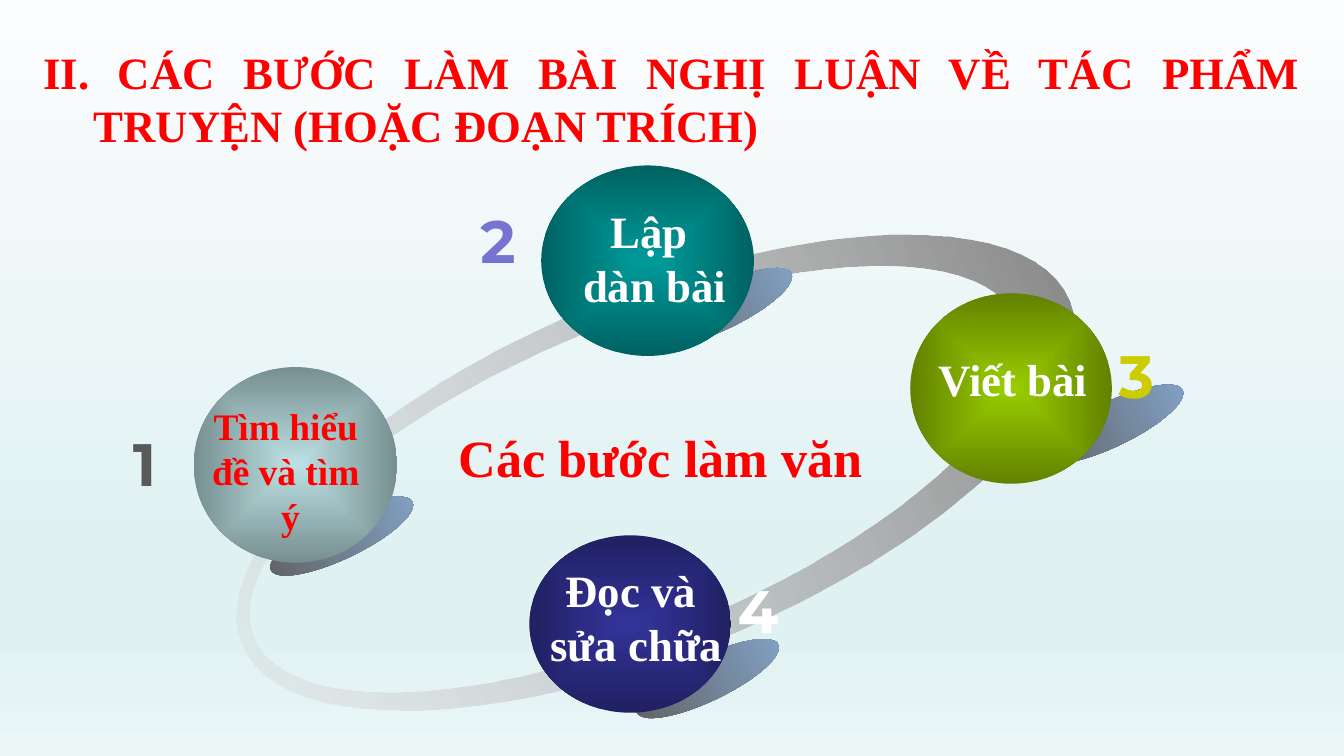
import math

from lxml import etree
from pptx import Presentation
from pptx.dml.color import RGBColor
from pptx.enum.shapes import MSO_SHAPE
from pptx.enum.text import MSO_AUTO_SIZE, PP_ALIGN
from pptx.oxml import parse_xml
from pptx.oxml.ns import nsdecls, qn
from pptx.util import Cm, Pt

OVAL = MSO_SHAPE.OVAL
CENTER, LEFT, JUSTIFY = PP_ALIGN.CENTER, PP_ALIGN.LEFT, PP_ALIGN.JUSTIFY
GROW, FIXED = MSO_AUTO_SIZE.SHAPE_TO_FIT_TEXT, MSO_AUTO_SIZE.NONE

RED = RGBColor(0xFF, 0x00, 0x00)
WHITE = RGBColor(0xFF, 0xFF, 0xFF)
GREY = RGBColor(0x59, 0x59, 0x59)
LILAC = RGBColor(0x75, 0x75, 0xD1)
YELLOW = RGBColor(0xCC, 0xCC, 0x00)
ICE = RGBColor(0xBB, 0xE0, 0xE3)
TEAL = RGBColor(0x00, 0x99, 0x99)
LIME = RGBColor(0x99, 0xCC, 0x00)
NAVY = RGBColor(0x33, 0x33, 0x99)
SMOKE = RGBColor(0x5F, 0x5F, 0x5F)
STEEL = RGBColor(0x84, 0xA5, 0xCA)
SILVER = RGBColor(0xE2, 0xE2, 0xE2)
ASH = RGBColor(0x80, 0x80, 0x80)
SKY = RGBColor(0xFC, 0xFD, 0xFE)
MINT = RGBColor(0xE0, 0xF1, 0xF2)
PALE = RGBColor(0xEB, 0xF6, 0xF7)

SERIF, SANS = "Times New Roman", "Montserrat"
LINEAR = '<a:lin ang="0" scaled="0"/>'
DOWN = '<a:lin ang="5400000" scaled="0"/>'
RADIAL = ('<a:path path="shape"><a:fillToRect l="50000" t="50000" '
          'r="50000" b="50000"/></a:path>')

# ball box, ball colour, shadow offset, label (offset, size), number offset (cm)
STEPS = [
    dict(box=(4.88, 9.25, 5.13, 4.93), ball=ICE, shade=(1.75, 3.7),
         lines=["Tìm hiểu đề và tìm", " ý"], label=(0, 0.78, 4.65, 4.47),
         size=26.7, ink=RED, spot=(-1.78, 1.39), tint=GREY),
    dict(box=(13.64, 4.17, 5.36, 4.8), ball=TEAL, shade=(2.54, 3.02),
         lines=["Lập ", "dàn bài"], label=(0.18, 0.84, 5.36, 3),
         spot=(-1.78, 0.84), tint=LILAC),
    dict(box=(22.94, 7.39, 5.08, 4.8), ball=LIME, shade=(3.1, 2.74),
         lines=["Viết bài"], label=(0.46, 1.35, 4.29, 1.63),
         align=LEFT, wrap=False, spot=(5, 1.02), tint=YELLOW),
    dict(box=(13.34, 13.49, 5.08, 4.47), ball=NAVY, shade=(2.51, 3.05),
         lines=["Đọc và ", "sửa chữa"], label=(0.25, 0.56, 4.9, 3),
         wrap=False, spot=(5, 0.84), tint=WHITE),
]


def blend(fill, parent, stops, course):
    """Give parent a gradient; each stop is (percent, colour, modifier)."""
    fill.solid()
    marks = "".join(
        f'<a:gs pos="{pos * 1000}"><a:srgbClr val="{color}">{extra}'
        '</a:srgbClr></a:gs>' for pos, color, extra in stops)
    grad = parse_xml(f'<a:gradFill {nsdecls("a")} rotWithShape="1">'
                     f'<a:gsLst>{marks}</a:gsLst>{course}</a:gradFill>')
    parent.replace(parent.find(qn("a:solidFill")), grad)


def finish(shape, stops, course):
    shape.shadow.inherit = False
    shape.line.fill.background()
    blend(shape.fill, shape._element.spPr, stops, course)


def write(slide, box, lines, size, color, font=SERIF, align=CENTER,
          wrap=True, auto=GROW):
    frame = slide.shapes.add_textbox(*map(Cm, box)).text_frame
    frame.word_wrap = wrap
    frame.auto_size = auto
    frame.text = "\n".join(lines)
    for para in frame.paragraphs:
        para.alignment = align
        para.font.name = font
        para.font.size = Pt(size)
        para.font.bold = True
        para.font.color.rgb = color
    return frame


def add_title(slide, box):
    frame = write(slide, box, ["II. CÁC BƯỚC LÀM BÀI NGHỊ LUẬN VỀ TÁC PHẨM "
                               "TRUYỆN (HOẶC ĐOẠN TRÍCH)"],
                  32, RED, align=JUSTIFY)
    props = frame.paragraphs[0]._p.get_or_add_pPr()
    props.set("marL", str(Cm(1.27)))
    props.set("indent", str(-Cm(1.27)))


def add_ring(slide, box):
    """Draw a tilted ellipse with an off-centre elliptical hole."""
    left, top, width, height = box
    mid, eye = left + width / 2, top + height / 2

    def loop(x, y, across, up, turn):
        angles = [turn * math.radians(a) for a in range(0, 360, 4)]
        return [(Cm(x + across * math.cos(a)), Cm(y + up * math.sin(a)))
                for a in angles]

    outer = loop(mid, eye, width / 2, height / 2, 1)
    inner = loop(mid - 0.53, eye - 0.05, 10.4, 3.87, -1)
    path = slide.shapes.build_freeform(*outer[0])
    path.add_line_segments(outer[1:], close=True)
    path.move_to(*inner[0])
    path.add_line_segments(inner[1:], close=True)
    ring = path.convert_to_shape()
    ring.rotation = 337.4
    finish(ring, [(0, SILVER, '<a:alpha val="36000"/>'), (100, ASH, "")],
           LINEAR)


def add_step(slide, number, box, ball, shade, lines, label, spot, tint,
             size=32, ink=WHITE, align=CENTER, wrap=True):
    left, top = box[:2]

    def place(x, y, *extent):
        return (left + x, top + y, *extent)

    cast = slide.shapes.add_shape(OVAL, *map(Cm, place(*shade, 3.96, 1.12)))
    cast.rotation = 334.3
    finish(cast, [(0, SMOKE, ""), (100, STEEL, "")], LINEAR)
    globe = slide.shapes.add_shape(OVAL, *map(Cm, box))
    finish(globe, [(0, ball, ""), (100, ball, '<a:shade val="36000"/>')],
           RADIAL)
    write(slide, place(*label), lines, size, ink, align=align, wrap=wrap)
    write(slide, place(*spot, 1.75, 2.21), [str(number)], 42.7, tint,
          font=SANS, align=LEFT, wrap=False, auto=FIXED)


def main():
    deck = Presentation()
    deck.slide_width, deck.slide_height = Cm(33.87), Cm(19.05)
    slide = deck.slides.add_slide(deck.slide_layouts[6])
    fill = slide.background.fill
    fill.solid()
    blend(fill, slide.element.xpath("p:cSld/p:bg/p:bgPr")[0],
          [(0, SKY, ""), (74, MINT, ""), (83, MINT, ""), (100, PALE, "")],
          DOWN)
    add_title(slide, (0.84, 0.99, 32.18, 3))
    add_ring(slide, (5.23, 7.42, 22.58, 8.97))
    for number, step in enumerate(STEPS, 1):
        add_step(slide, number, **step)
    write(slide, (9.88, 10.59, 13.54, 1.85), ["Các bước làm văn"], 37.3, RED)
    deck.save("out.pptx")


if __name__ == "__main__":
    main()
